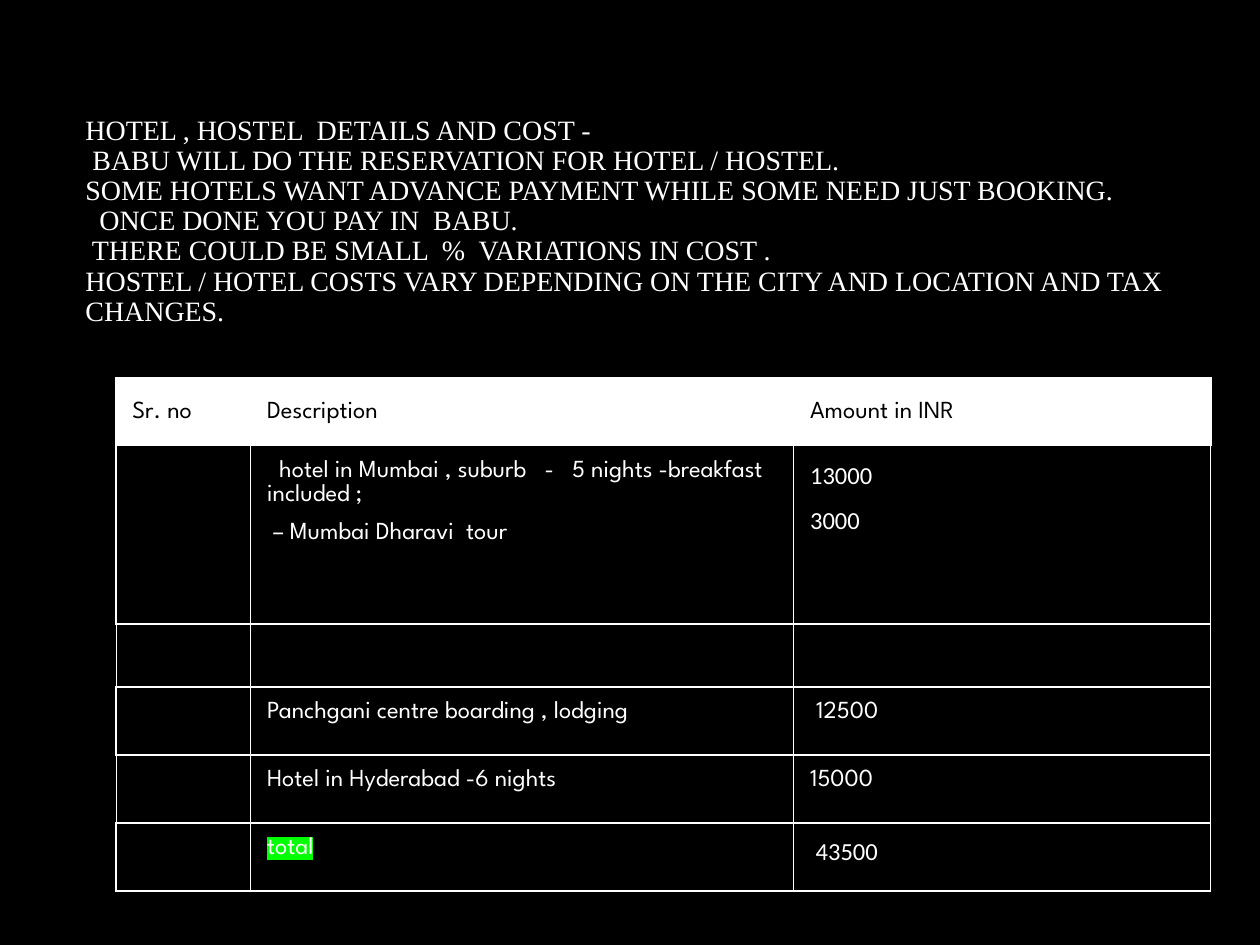
from lxml.etree import SubElement
from pptx import Presentation
from pptx.dml.color import RGBColor
from pptx.enum.text import MSO_ANCHOR as Anchor
from pptx.oxml.ns import qn
from pptx.util import Inches, Pt

WHITE, BLACK, GREEN = "FFFFFF", "000000", "00FF00"
SERIF, SPARTAN, CALIBRI = "Times New Roman", "League Spartan", "Calibri"
NO_STYLE = "{2D5ABB26-0587-4C30-8999-92F81FD0307C}"
THIN, THICK = 0.5, 1.5

TITLE = """HOTEL , HOSTEL  DETAILS AND COST -
 BABU WILL DO THE RESERVATION FOR HOTEL / HOSTEL.
SOME HOTELS WANT ADVANCE PAYMENT WHILE SOME NEED JUST BOOKING.
  ONCE DONE YOU PAY IN  BABU.
 THERE COULD BE SMALL  %  VARIATIONS IN COST .
HOSTEL / HOTEL COSTS VARY DEPENDING ON THE CITY AND LOCATION AND TAX CHANGES."""

COLUMNS = [1.07, 4.31, 3.31]
# Height, kind of row, font of the amount, lines of each cell
ROWS = [
    (0.54, "header", SPARTAN, [["Sr. no"], ["Description"], ["Amount in INR"]]),
    (1.41, "lower", CALIBRI, [
        [],
        ["  hotel in Mumbai , suburb   -   5 nights -breakfast included ;",
         " – Mumbai Dharavi  tour"],
        ["13000", "3000"]]),
    (0.5, "upper", SPARTAN, [[], [], []]),
    (0.54, "lower", SPARTAN, [[], ["Panchgani centre boarding , lodging"], [" 12500"]]),
    (0.54, "upper", SPARTAN, [[], ["Hotel in Hyderabad -6 nights"], ["15000"]]),
    (0.54, "lower", CALIBRI, [[], ["total"], [" 43500"]]),
]
BORDERS = {
    "header": {"L": THICK, "R": THICK, "T": THICK},
    "upper": {"L": THIN, "R": THIN, "T": THICK},
    "lower": {"L": THIN, "R": THIN, "B": THICK},
}


def rgb(value):
    return RGBColor.from_string(value)


def style(p, font, size, color, spacing):
    p.line_spacing = spacing
    p.font.name, p.font.size = font, Pt(size)
    p.font.color.rgb = rgb(color)


def set_borders(cell, widths):
    tcPr = cell._tc.get_or_add_tcPr()
    fills = list(tcPr)
    for side in "LRTB":
        if side in widths:
            ln = SubElement(tcPr, qn(f"a:ln{side}"), w=str(Pt(widths[side])))
            SubElement(SubElement(ln, qn("a:solidFill")), qn("a:srgbClr"), val=WHITE)
    tcPr.extend(fills)  # the fill has to follow the borders


def highlight(p, color):
    rPr = p.runs[0]._r.get_or_add_rPr()
    SubElement(SubElement(rPr, qn("a:highlight")), qn("a:srgbClr"), val=color)


def add_title(slide, left, top, width, height):
    tf = slide.shapes.add_textbox(left, top, width, height).text_frame
    tf.word_wrap = True
    tf.vertical_anchor = Anchor.MIDDLE
    tf.margin_bottom = Inches(0.29)
    p = tf.paragraphs[0]
    p.text = TITLE
    style(p, SERIF, 16, WHITE, 0.9)


def fill_cell(cell, lines, font, color):
    cell.margin_left, cell.margin_right = Inches(0.13), Inches(0.06)
    cell.margin_top = cell.margin_bottom = Inches(0.1)
    tf = cell.text_frame
    for i, line in enumerate(lines):
        p = tf.add_paragraph() if i else tf.paragraphs[0]
        p.text = line
        p.space_after = Pt(8)
        style(p, font, 14, color, 1.07)
        if line == "total":
            highlight(p, GREEN)


def add_costs(slide, left, top, width, height):
    frame = slide.shapes.add_table(len(ROWS), len(COLUMNS), left, top, width, height)
    table = frame.table
    table.horz_banding = False
    table._tbl.tblPr.find(qn("a:tableStyleId")).text = NO_STYLE
    for column, size in zip(table.columns, COLUMNS):
        column.width = Inches(size)
    for row, (size, kind, amount_font, texts) in zip(table.rows, ROWS):
        row.height = Inches(size)
        header = kind == "header"
        for c, (cell, lines) in enumerate(zip(row.cells, texts)):
            cell.fill.solid()
            cell.fill.fore_color.rgb = rgb(WHITE if header else BLACK)
            if header:
                cell.vertical_anchor = Anchor.MIDDLE
            fill_cell(cell, lines, amount_font if c == 2 else SPARTAN,
                      BLACK if header else WHITE)
            widths = dict(BORDERS[kind])
            if kind == "lower" and c == 0:
                widths["L"] = THICK
            set_borders(cell, widths)


def main():
    prs = Presentation()
    prs.slide_width, prs.slide_height = Inches(10), Inches(7.5)
    slide = prs.slides.add_slide(prs.slide_layouts[6])
    slide.background.fill.solid()
    slide.background.fill.fore_color.rgb = rgb(BLACK)
    add_title(slide, Inches(0.58), Inches(0.84), Inches(8.85), Inches(2.08))
    add_costs(slide, Inches(0.92), Inches(3), Inches(8.69), Inches(4.08))
    prs.save("out.pptx")


if __name__ == "__main__":
    main()
